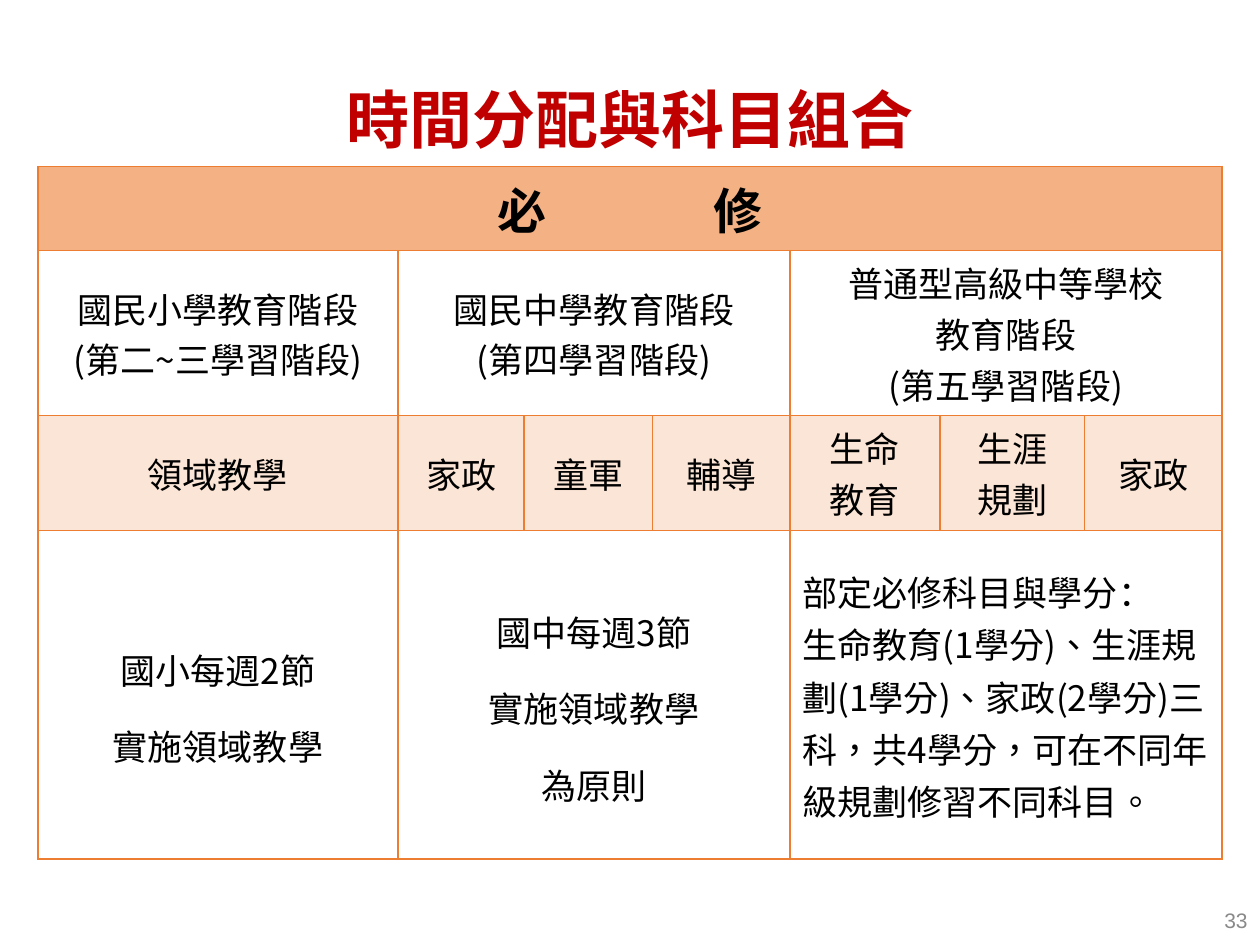
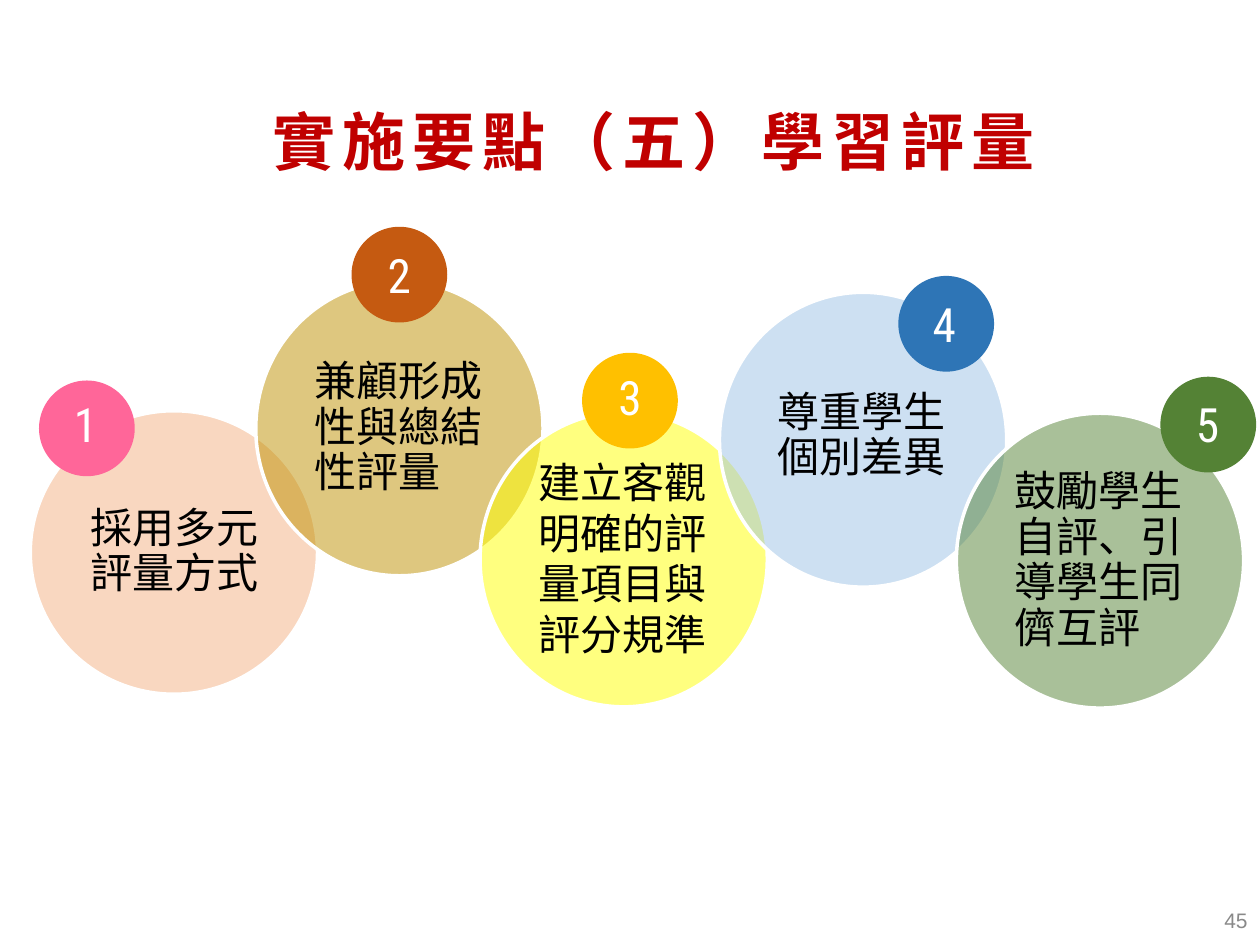
from lxml import etree
from pptx import Presentation
from pptx.dml.color import RGBColor
from pptx.enum.shapes import MSO_SHAPE
from pptx.enum.text import MSO_ANCHOR as Anchor, PP_ALIGN as Align
from pptx.oxml import parse_xml
from pptx.oxml.ns import nsdecls, qn
from pptx.util import Inches, Pt

# Shared style
CJK_FONT, DIGIT_FONT, PAGE_FONT = "Noto Sans CJK SC", "Roboto Condensed", "Arial"
RED, BLACK, WHITE, GREY = "C00000", "000000", "FFFFFF", "898989"
ORANGE, HEADER_FILL, SUBJECT_FILL = "ED7D31", "F4B183", "FBE5D6"

# Slide 1: table rows as (height, fill, line spacing, cells),
# each cell as (column span, anchor, alignment, lines)
COLUMN_WIDTHS = [2.86, 1, 1.02, 1.09, 1.19, 1.15, 1.09]
TOP, MIDDLE = Anchor.TOP, Anchor.MIDDLE
CENTER, LEFT = Align.CENTER, Align.LEFT
TABLE_ROWS = [
    (0.67, HEADER_FILL, None, [(7, TOP, CENTER, ["必修"])]),
    (1.31, None, None, [
        (1, MIDDLE, CENTER, ["國民小學教育階段", "(第二~三學習階段)"]),
        (3, MIDDLE, CENTER, ["國民中學教育階段", "(第四學習階段)"]),
        (3, TOP, CENTER, ["普通型高級中等學校", "教育階段", "(第五學習階段)"]),
    ]),
    (0.91, SUBJECT_FILL, None, [
        (1, MIDDLE, CENTER, ["領域教學"]),
        (1, MIDDLE, CENTER, ["家政"]),
        (1, MIDDLE, CENTER, ["童軍"]),
        (1, MIDDLE, CENTER, ["輔導"]),
        (1, TOP, CENTER, ["生命", "教育"]),
        (1, TOP, CENTER, ["生涯", "規劃"]),
        (1, MIDDLE, CENTER, ["家政"]),
    ]),
    (2.61, None, 1.5, [
        (1, MIDDLE, CENTER, ["國小每週2節", "實施領域教學"]),
        (3, MIDDLE, CENTER, ["國中每週3節", "實施領域教學", "為原則"]),
        (3, MIDDLE, LEFT, [
            "部定必修科目與學分：",
            "生命教育(1學分)、生涯規劃(1學分)、家政(2學分)三科，共4學分，"
            "可在不同年級規劃修習不同科目。"]),
    ]),
]
HEADER_GAP = 95  # points between the two header characters

# Slide 2: circles as (left, top, height, fill, alignment, line pitch, bottom inset, text)
CIRCLE_WIDTH, BADGE_SIZE = 2.28, 0.76
CIRCLES = [
    (0.24, 3.26, 2.25, "F4B183", CENTER, 26, 0.04, "採用多元評量方式"),
    (2.03, 2.23, 2.34, "BF9000", LEFT, 26, 0.04, "兼顧形成性與總結性評量"),
    (3.81, 3.27, 2.34, "FFFF00", LEFT, 29, 0.06, "建立客觀明確的評量項目與評分規準"),
    (5.71, 2.32, 2.34, "9DC3E6", LEFT, 26, 0.09, "尊重學生個別差異"),
    (7.59, 3.28, 2.34, "548235", LEFT, 26, 0.03, "鼓勵學生自評、引導學生同儕互評"),
]
# Badges as (left, top, fill, right inset, bottom inset), numbered in order
BADGES = [
    (0.31, 3.02, "FF6699", 0.02, 0.08),
    (2.79, 1.8, "C55A11", 0, 0),
    (4.62, 2.8, "FFC000", 0, 0.06),
    (7.13, 2.19, "2E75B6", 0.03, 0),
    (9.21, 2.99, "548235", 0.01, 0.02),
]


def color(hex_value):
    return RGBColor.from_string(hex_value)


def format_paragraph(paragraph, size, text_color, font_name=CJK_FONT, bold=False,
                     alignment=CENTER, line_spacing=None, tracking=0):
    paragraph.alignment = alignment
    if line_spacing:
        paragraph.line_spacing = line_spacing
    for run in paragraph.runs:
        font = run.font
        font.size, font.bold, font.name = Pt(size), bold, font_name
        font.color.rgb = color(text_color)
        properties = run._r.get_or_add_rPr()
        etree.SubElement(properties, qn("a:ea")).set("typeface", font_name)
        if tracking:
            properties.set("spc", str(tracking * 100))


def set_insets(frame, left, top, right, bottom):
    frame.margin_left, frame.margin_top = Inches(left), Inches(top)
    frame.margin_right, frame.margin_bottom = Inches(right), Inches(bottom)


def add_slide(presentation, title_text, left, top, page_number, tracking=0):
    slide = presentation.slides.add_slide(presentation.slide_layouts[5])
    title = slide.shapes.title
    title.left, title.top = Inches(left), Inches(top)
    title.width, title.height = Inches(8.62), Inches(1.45)
    title.text_frame.text = title_text
    title.text_frame.vertical_anchor = MIDDLE
    format_paragraph(title.text_frame.paragraphs[0], 36, RED, bold=True,
                     line_spacing=0.9, tracking=tracking)

    page = slide.shapes.add_textbox(Inches(7.75), Inches(7.1), Inches(2.25), Inches(0.4))
    page.text_frame.text = str(page_number)
    page.text_frame.word_wrap = True
    page.text_frame.vertical_anchor = MIDDLE
    format_paragraph(page.text_frame.paragraphs[0], 12, GREY, PAGE_FONT,
                     alignment=Align.RIGHT)
    return slide


def add_ellipse(slide, left, top, width, height, fill):
    shape = slide.shapes.add_shape(MSO_SHAPE.OVAL, Inches(left), Inches(top),
                                   Inches(width), Inches(height))
    shape.shadow.inherit = False
    shape.fill.solid()
    shape.fill.fore_color.rgb = color(fill)
    shape.text_frame.vertical_anchor = MIDDLE
    return shape


def style_cell(cell, fill):
    properties = cell._tc.get_or_add_tcPr()
    for side in ("lnL", "lnR", "lnT", "lnB"):
        properties.append(parse_xml(
            f'<a:{side} {nsdecls("a")} w="{Pt(1)}"><a:solidFill>'
            f'<a:srgbClr val="{ORANGE}"/></a:solidFill></a:{side}>'))
    if fill:
        cell.fill.solid()
        cell.fill.fore_color.rgb = color(fill)
    else:
        cell.fill.background()


def add_subject_table(slide):
    table = slide.shapes.add_table(
        len(TABLE_ROWS), len(COLUMN_WIDTHS), Inches(0.3), Inches(1.32),
        Inches(sum(COLUMN_WIDTHS)), Inches(sum(row[0] for row in TABLE_ROWS))).table
    table.first_row = table.horz_banding = False
    for column, width in zip(table.columns, COLUMN_WIDTHS):
        column.width = Inches(width)

    for row_index, (height, fill, spacing, cells) in enumerate(TABLE_ROWS):
        table.rows[row_index].height = Inches(height)
        for cell in table.rows[row_index].cells:
            style_cell(cell, fill)
        column_index = 0
        for span, anchor, alignment, lines in cells:
            cell = table.cell(row_index, column_index)
            if span > 1:
                cell.merge(table.cell(row_index, column_index + span - 1))
            column_index += span
            cell.vertical_anchor = anchor
            cell.text_frame.text = "\n".join(lines)
            for paragraph in cell.text_frame.paragraphs:
                format_paragraph(paragraph, 20, BLACK, alignment=alignment,
                                 line_spacing=Pt(30) if alignment == LEFT else spacing)

    # Header: wide tracking after the first character only
    header = table.cell(0, 0).text_frame.paragraphs[0]
    first, last = header.text
    header.text = first
    header.add_run().text = last
    format_paragraph(header, 28, BLACK, bold=True)
    header.runs[0]._r.get_or_add_rPr().set("spc", str(HEADER_GAP * 100))

    # Credits: centred punctuation of Traditional Chinese
    credits = table.cell(3, 4).text_frame.paragraphs[1]
    credits.runs[0]._r.get_or_add_rPr().set("lang", "zh-TW")


def add_circles(slide):
    for left, top, height, fill, alignment, pitch, bottom_inset, text in CIRCLES:
        circle = add_ellipse(slide, left, top, CIRCLE_WIDTH, height, fill)
        fill_color = circle.fill._xPr.find(qn("a:solidFill"))[0]
        etree.SubElement(fill_color, qn("a:alpha")).set("val", "50000")
        circle.line.color.rgb = color(WHITE)
        circle.line.width = Pt(2)
        frame = circle.text_frame
        frame.text = text
        frame.word_wrap = True
        set_insets(frame, 0.13, 0.03, 0.12, bottom_inset)
        format_paragraph(frame.paragraphs[0], 24, BLACK, alignment=alignment,
                         line_spacing=Pt(pitch))


def add_badges(slide):
    for number, (left, top, fill, right_inset, bottom_inset) in enumerate(BADGES, start=1):
        badge = add_ellipse(slide, left, top, BADGE_SIZE, BADGE_SIZE, fill)
        badge.line.fill.background()
        badge.text_frame.text = str(number)
        set_insets(badge.text_frame, 0, 0, right_inset, bottom_inset)
        format_paragraph(badge.text_frame.paragraphs[0], 27, WHITE, DIGIT_FONT)


def main():
    presentation = Presentation()
    presentation.slide_width, presentation.slide_height = Inches(10), Inches(7.5)

    add_subject_table(add_slide(presentation, "時間分配與科目組合", 0.69, 0.25, 33))

    assessment = add_slide(presentation, "實施要點（五）學習評量", 0.88, 0.43, 45, tracking=4)
    add_circles(assessment)
    add_badges(assessment)

    presentation.save("out.pptx")


if __name__ == "__main__":
    main()
